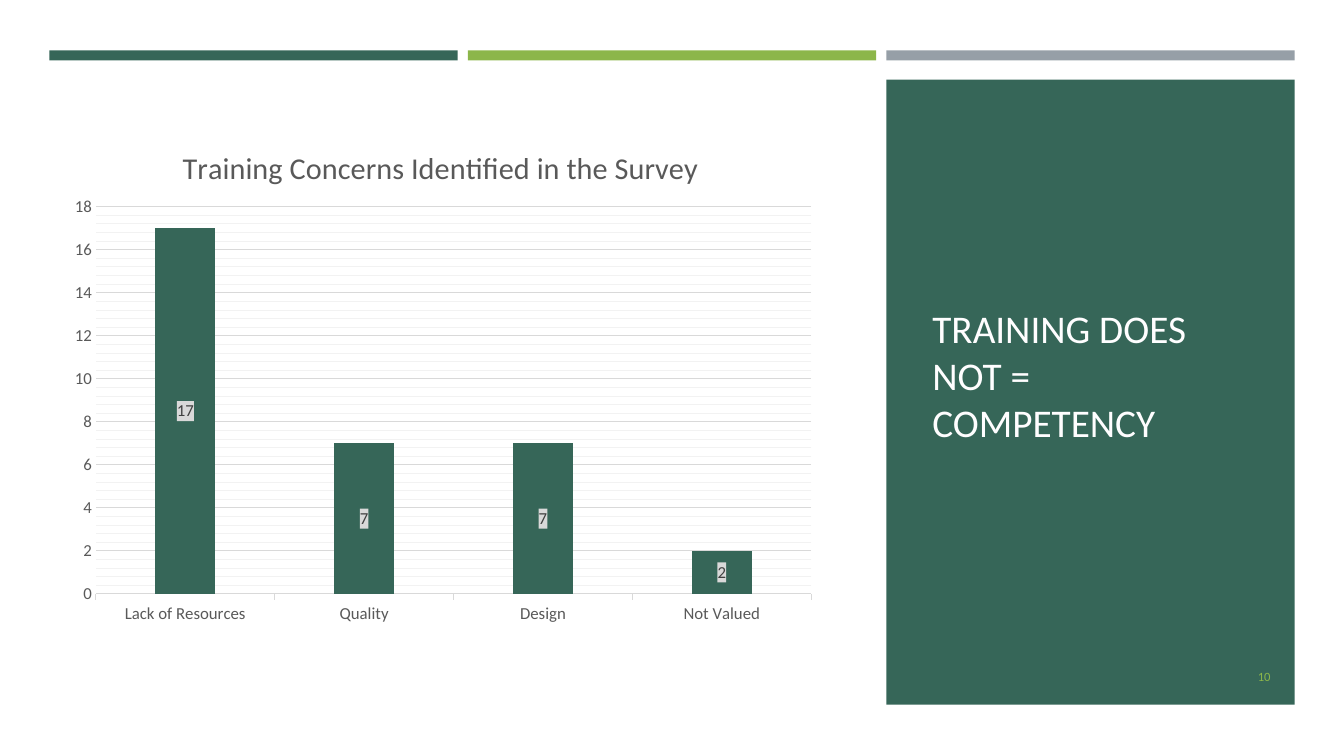
from lxml.etree import SubElement
from pptx import Presentation
from pptx.chart.data import CategoryChartData
from pptx.dml.color import RGBColor
from pptx.enum.chart import XL_CHART_TYPE, XL_LABEL_POSITION, XL_TICK_MARK
from pptx.enum.shapes import MSO_SHAPE
from pptx.enum.text import MSO_ANCHOR, PP_ALIGN
from pptx.oxml import parse_xml
from pptx.oxml.ns import nsdecls, qn
from pptx.util import Inches, Pt

GREEN, LIME, GRAY = "366658", "8CB64A", "969FA7"
FONT = "Calibri"


def color(code):
    return RGBColor.from_string(code)


def style(font, size, code):
    font.name = FONT
    font.size = Pt(size)
    font.bold = False
    font.color.rgb = color(code)


def block(slide, x, y, w, h, code):
    shape = slide.shapes.add_shape(
        MSO_SHAPE.RECTANGLE, Inches(x), Inches(y), Inches(w), Inches(h))
    shape.shadow.inherit = False
    shape.fill.solid()
    shape.fill.fore_color.rgb = color(code)
    shape.line.fill.background()


def label(slide, x, y, w, h, text, size, code, align=PP_ALIGN.LEFT):
    box = slide.shapes.add_textbox(Inches(x), Inches(y), Inches(w), Inches(h))
    frame = box.text_frame
    frame.word_wrap = True
    frame.vertical_anchor = MSO_ANCHOR.MIDDLE
    para = frame.paragraphs[0]
    para.text = text
    para.alignment = align
    style(para.font, size, code)


def bars(slide, x, y, w, h, gap=0.1):
    width = (w - 2 * gap) / 3
    for i, code in enumerate((GREEN, LIME, GRAY)):
        block(slide, x + i * (width + gap), y, width, h, code)


def panel(slide, x, y, w, h):
    block(slide, x, y, w, h, GREEN)
    label(slide, x + 0.36, y + 0.35, w - 0.71, h - 1.05,
          "TRAINING DOES NOT = COMPETENCY", 28, "FFFEFF")
    label(slide, x + w - 1.29, y + h - 0.48, 1.15, 0.4, "10", 9, LIME,
          PP_ALIGN.RIGHT)


def place(node, **spots):
    layout = node.find(qn("c:layout"))
    if layout is None:
        layout = parse_xml(f"<c:layout {nsdecls('c')}/>")
        if node.tag == qn("c:title"):
            node.find(qn("c:tx")).addnext(layout)
        else:
            node.insert(0, layout)
    manual = SubElement(layout, qn("c:manualLayout"))
    for key, val in spots.items():
        SubElement(manual, qn("c:" + key), val=str(val))


def rule(line, code):
    line.color.rgb = color(code)
    line.width = Pt(0.75)


def paint(code, tag="c:spPr", line=False):
    fill = f'<a:solidFill><a:srgbClr val="{code}"/></a:solidFill>'
    if line:
        fill = f'<a:ln w="{Pt(0.75)}">{fill}</a:ln>'
    return parse_xml(f'<{tag} {nsdecls("c", "a")}>{fill}</{tag}>')


def survey(slide, x, y, w, h):
    data = CategoryChartData()
    data.categories = ["Lack of Resources", "Quality", "Design", "Not Valued"]
    data.add_series("Series 1", (17, 7, 7, 2))
    chart = slide.shapes.add_chart(
        XL_CHART_TYPE.COLUMN_CLUSTERED,
        Inches(x), Inches(y), Inches(w), Inches(h), data).chart
    style(chart.font, 10, "000000")
    chart.has_legend = False
    chart.has_title = True
    title = chart.chart_title
    para = title.text_frame.paragraphs[0]
    para.text = "Training Concerns Identified in the Survey"
    style(para.font, 21.6, "595959")
    place(title._element, xMode="edge", yMode="edge", x=0.16, y=0.05)

    cats, vals = chart.category_axis, chart.value_axis
    for axis in (cats, vals):
        style(axis.tick_labels.font, 12, "595959")
        axis.minor_tick_mark = XL_TICK_MARK.NONE
    cats.major_tick_mark = XL_TICK_MARK.OUTSIDE
    rule(cats.format.line, "D9D9D9")
    vals.major_tick_mark = XL_TICK_MARK.NONE
    vals.format.line.fill.background()
    vals.minimum_scale, vals.maximum_scale = 0, 18
    vals.major_unit, vals.minor_unit = 2, 0.4
    vals.has_major_gridlines = vals.has_minor_gridlines = True
    rule(vals.major_gridlines.format.line, "D9D9D9")
    minor = vals._element.find(qn("c:minorGridlines"))
    minor.append(paint("F2F2F2", line=True))

    plot = chart.plots[0]
    plot.gap_width = 199
    plot.vary_by_categories = False
    series = plot.series[0]
    series.format.fill.solid()
    series.format.fill.fore_color.rgb = color(GREEN)
    tags = series.data_labels
    tags.show_value = True
    tags.position = XL_LABEL_POSITION.CENTER
    style(tags.font, 12, "404040")
    tags._element.find(qn("c:txPr")).addprevious(paint("D9D9D9"))
    area = chart._chartSpace.find(qn("c:chart")).find(qn("c:plotArea"))
    place(area, layoutTarget="inner", xMode="edge", yMode="edge",
          x=0.055, y=0.177, w=0.925, h=0.746)


def main():
    deck = Presentation()
    deck.slide_width, deck.slide_height = Inches(13.33), Inches(7.5)
    slide = deck.slides.add_slide(deck.slide_layouts[6])
    bars(slide, 0.49, 0.5, 12.35, 0.1)
    panel(slide, 8.79, 0.79, 4.05, 6.2)
    survey(slide, 0.53, 1.14, 7.67, 5.15)
    deck.save("out.pptx")


if __name__ == "__main__":
    main()
